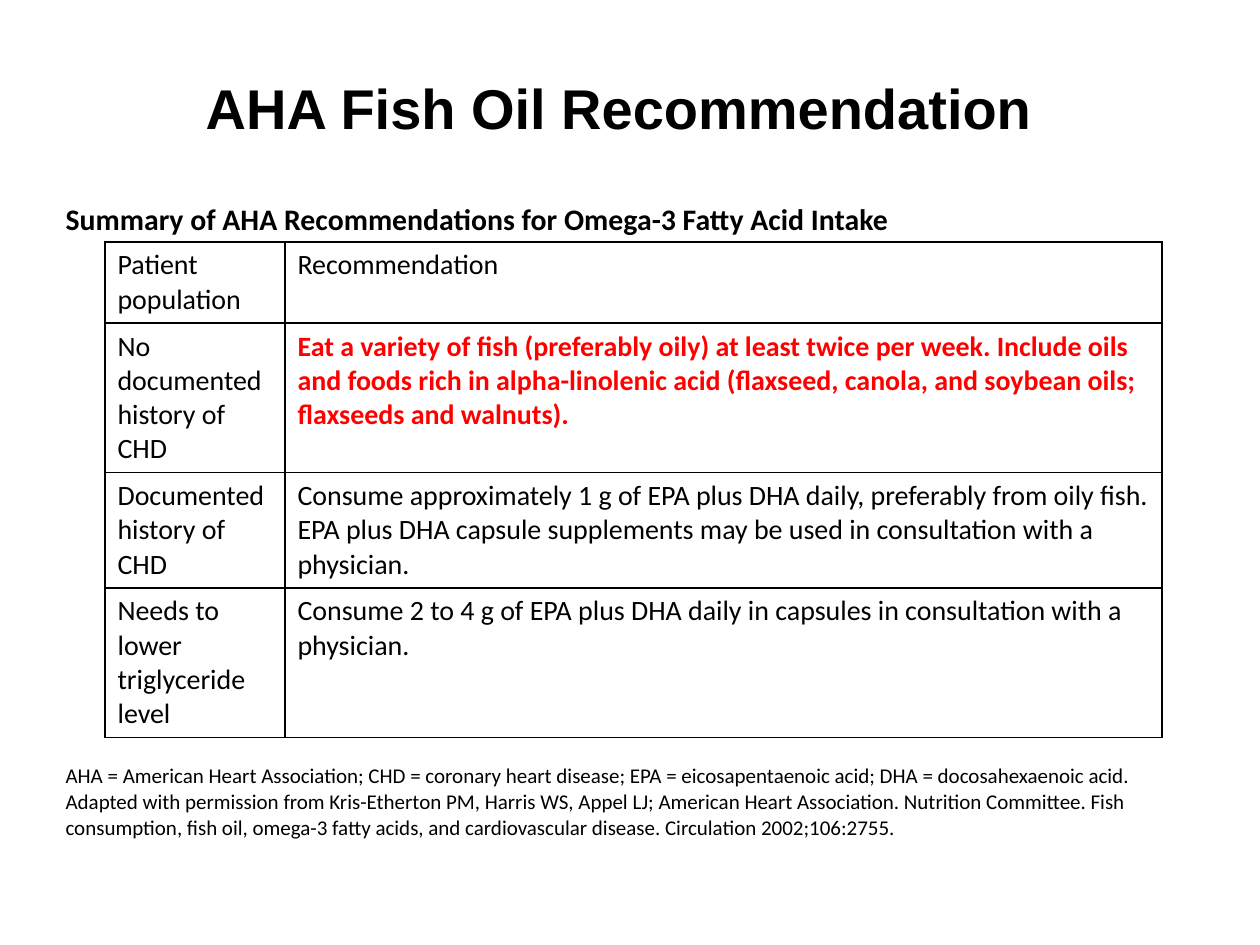
from dataclasses import dataclass

from pptx import Presentation
from pptx import util as u
from pptx.dml.color import RGBColor
from pptx.enum import text
from pptx.oxml import parse_xml
from pptx.oxml.ns import nsdecls

PX = 914400 / 126


@dataclass(frozen=True)
class Theme:
    ink: str = "000000"
    alert: str = "FF0000"
    heading_font: str = "Arial"
    body_font: str = "Calibri"
    title_size: int = 32
    caption_size: int = 17
    table_size: int = 16
    note_size: int = 12


THEME = Theme()


@dataclass(frozen=True)
class CellText:
    paragraphs: tuple[str, ...]
    size: int = THEME.table_size
    color: str = THEME.ink
    bold: bool = False


@dataclass(frozen=True)
class TableBlock:
    left: int
    top: int
    columns: tuple[int, ...]
    rows: tuple[int, ...]
    cells: dict[tuple[int, int], CellText]
    anchor: text.MSO_ANCHOR
    bordered: bool


def emu(pixels: int) -> u.Emu:
    return u.Emu(round(pixels * PX))


def set_attributes(target, values: dict) -> None:
    for name, value in values.items():
        setattr(target, name, value)


def format_font(font, name: str, size: int, color: str, bold: bool) -> None:
    set_attributes(font, {"name": name, "size": u.Pt(size), "bold": bold})
    font.color.rgb = RGBColor.from_string(color)


def write_cell(cell, content: CellText) -> None:
    frame = cell.text_frame
    for index, wording in enumerate(content.paragraphs):
        paragraph = frame.add_paragraph() if index else frame.paragraphs[0]
        paragraph.text = wording
        for run in paragraph.runs:
            format_font(run.font, THEME.body_font, content.size, content.color, content.bold)


def add_borders(cell) -> None:
    properties = cell._tc.get_or_add_tcPr()
    for index, side in enumerate(("lnL", "lnR", "lnT", "lnB")):
        line = parse_xml(
            f'<a:{side} {nsdecls("a")} w="{u.Pt(1)}"><a:solidFill>'
            f'<a:srgbClr val="{THEME.ink}"/></a:solidFill></a:{side}>'
        )
        properties.insert(index, line)


def draw_table(slide, block: TableBlock) -> None:
    table = slide.shapes.add_table(
        len(block.rows), len(block.columns), emu(block.left), emu(block.top),
        emu(sum(block.columns)), emu(sum(block.rows)),
    ).table
    set_attributes(table, {"first_row": False, "horz_banding": False})
    for column, width in zip(table.columns, block.columns):
        column.width = emu(width)
    for row, height in zip(table.rows, block.rows):
        row.height = emu(height)
    for cell in table.iter_cells():
        cell.fill.background()
        cell.vertical_anchor = block.anchor
        if block.bordered:
            add_borders(cell)
    for (row, column), content in block.cells.items():
        write_cell(table.cell(row, column), content)


def draw_title(slide, wording: str) -> None:
    title = slide.shapes.title
    set_attributes(title, {
        "left": emu(136), "top": emu(49), "width": emu(966), "height": emu(116),
    })
    frame = title.text_frame
    set_attributes(frame, {
        "text": wording, "word_wrap": False, "auto_size": text.MSO_AUTO_SIZE.NONE,
        "vertical_anchor": text.MSO_ANCHOR.MIDDLE,
    })
    paragraph = frame.paragraphs[0]
    paragraph.alignment = text.PP_ALIGN.CENTER
    format_font(paragraph.runs[0].font, THEME.heading_font, THEME.title_size, THEME.ink, True)


RECOMMENDATIONS = (
    (CellText(("Patient population",)), CellText(("Recommendation",))),
    (
        CellText(("No documented\vhistory of CHD",)),
        CellText((
            "Eat a variety of fish (preferably oily) at least twice per week. Include oils "
            "and foods rich in alpha-linolenic acid (flaxseed, canola, and soybean oils; "
            "flaxseeds and walnuts).",
        ), color=THEME.alert, bold=True),
    ),
    (
        CellText(("Documented history of CHD",)),
        CellText((
            "Consume approximately 1 g of EPA plus DHA daily, preferably from oily fish. "
            "EPA plus DHA capsule supplements may be used in consultation with a physician.",
        )),
    ),
    (
        CellText(("Needs to lower triglyceride level",)),
        CellText((
            "Consume 2 to 4 g of EPA plus DHA daily in capsules in consultation with a physician.",
        )),
    ),
)

SUMMARY_FRAME = TableBlock(
    left=53, top=189, columns=(1155,), rows=(62, 117, 229, 116, 179),
    cells={
        (0, 0): CellText(
            ("Summary of AHA Recommendations for Omega-3 Fatty Acid Intake",),
            size=THEME.caption_size, bold=True,
        ),
        (4, 0): CellText((
            "AHA = American Heart Association; CHD = coronary heart disease; "
            "EPA = eicosapentaenoic acid; DHA = docosahexaenoic acid.",
            "Adapted with permission from Kris-Etherton PM, Harris WS, Appel LJ; American "
            "Heart Association. Nutrition Committee. Fish consumption, fish oil, omega-3 "
            "fatty acids, and cardiovascular disease. Circulation 2002;106:2755.",
        ), size=THEME.note_size),
    },
    anchor=text.MSO_ANCHOR.MIDDLE, bordered=False,
)

RECOMMENDATION_TABLE = TableBlock(
    left=105, top=242, columns=(180, 877), rows=(80, 147, 113, 147),
    cells={
        (row, column): content
        for row, contents in enumerate(RECOMMENDATIONS)
        for column, content in enumerate(contents)
    },
    anchor=text.MSO_ANCHOR.TOP, bordered=True,
)


def main() -> None:
    presentation = Presentation()
    set_attributes(presentation, {"slide_width": emu(1260), "slide_height": emu(945)})
    slide = presentation.slides.add_slide(presentation.slide_layouts.get_by_name("Title Only"))
    draw_title(slide, "AHA Fish Oil Recommendation")
    for block in (SUMMARY_FRAME, RECOMMENDATION_TABLE):
        draw_table(slide, block)
    presentation.save("out.pptx")


if __name__ == "__main__":
    main()
